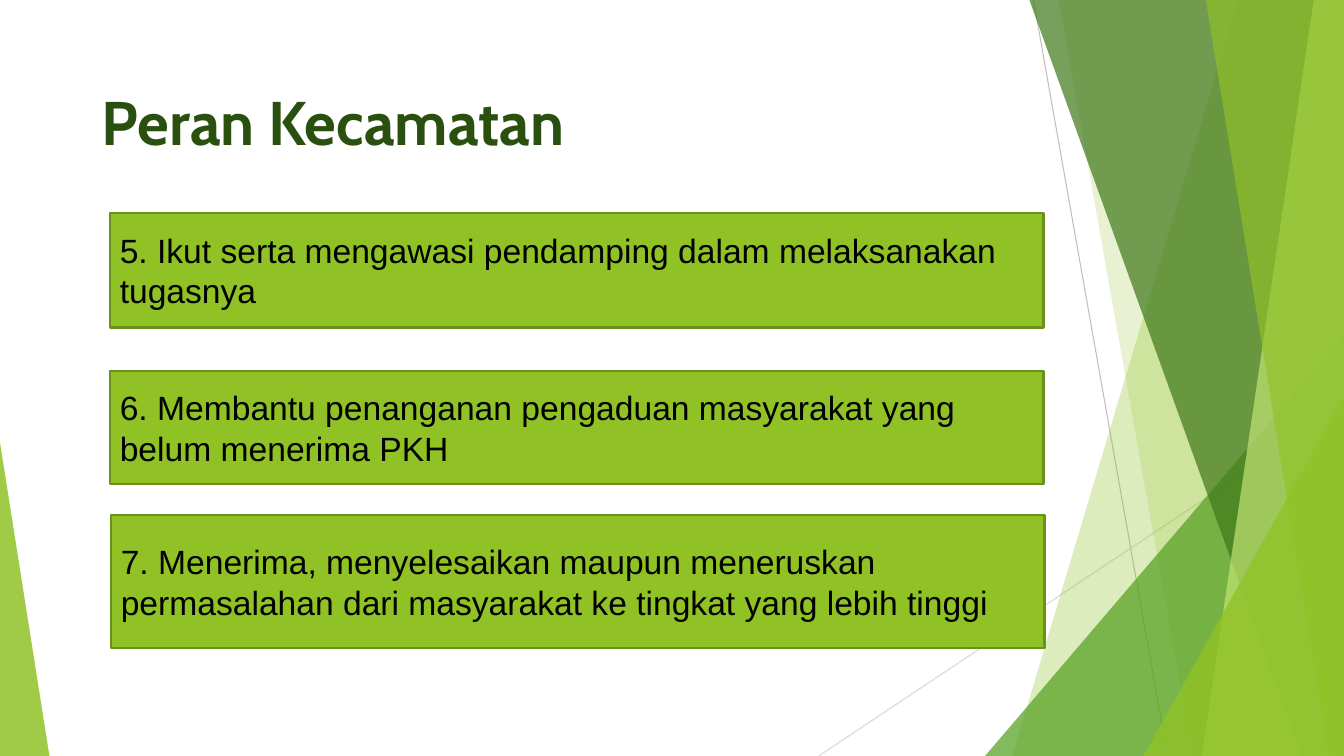
from dataclasses import dataclass

import pptx
import pptx.dml.color
import pptx.enum.shapes
import pptx.enum.text
import pptx.oxml.ns
import pptx.oxml.xmlchemy
import pptx.util
from pptx.util import Inches


@dataclass(frozen=True)
class Theme:
    lime: str = "90C226"
    lime_edge: str = "6B901C"
    pale_lime: str = "C0E474"
    green: str = "54A021"
    dark_green: str = "3F7819"
    title_color: str = "2A5010"
    body_color: str = "000000"
    steep_line: str = "BFBFBF"
    shallow_line: str = "D9D9D9"
    title_font: str = "Cabin"
    body_font: str = "Arial"
    title_size: int = 44
    body_size: int = 24


THEME = Theme()
WIDTH, HEIGHT = 13.33, 7.5
BANDS_BEHIND = [
    (12.28, 10.04, THEME.lime, 30),
    (10.5, 11.83, THEME.lime, 20),
]
BANDS_IN_FRONT = [
    (10.21, 12.91, THEME.dark_green, 70),
    (13.03, 11.92, THEME.pale_lime, 70),
    (11.96, 13.18, THEME.lime, 65),
]
ROLES = [
    (1.09, 2.11, 1.14, "5. Ikut serta mengawasi pendamping dalam melaksanakan tugasnya"),
    (1.09, 3.68, 1.12, "6. Membantu penanganan pengaduan masyarakat yang belum menerima PKH"),
    (1.1, 5.11, 1.32, "7. Menerima, menyelesaikan maupun meneruskan permasalahan dari masyarakat ke tingkat yang lebih tinggi"),
]


def rgb(color):
    return pptx.dml.color.RGBColor.from_string(color)


def paint(shape, color, opacity=100):
    shape.shadow.inherit = False
    shape.fill.solid()
    shape.fill.fore_color.rgb = rgb(color)
    shape.line.fill.background()
    if opacity < 100:
        color_element = shape._element.spPr.find(".//" + pptx.oxml.ns.qn("a:srgbClr"))
        alpha = pptx.oxml.xmlchemy.OxmlElement("a:alpha")
        alpha.set("val", str(opacity * 1000))
        color_element.append(alpha)


def add_line(slide, start, end, color):
    line = slide.shapes.add_connector(
        pptx.enum.shapes.MSO_CONNECTOR.STRAIGHT, *map(Inches, start + end))
    line.line.color.rgb = rgb(color)
    line.line.width = pptx.util.Pt(0.75)
    line._element.spPr.append(pptx.oxml.xmlchemy.OxmlElement("a:effectLst"))


def add_band(slide, top_x, bottom_x, color, opacity):
    builder = slide.shapes.build_freeform(Inches(top_x), Inches(0), scale=1.0)
    corners = [(WIDTH, 0), (WIDTH, HEIGHT), (bottom_x, HEIGHT)]
    builder.add_line_segments([(Inches(x), Inches(y)) for x, y in corners], close=True)
    paint(builder.convert_to_shape(), color, opacity)


def add_corner(slide, left, top, width, apex, color, opacity):
    shape = slide.shapes.add_shape(
        pptx.enum.shapes.MSO_SHAPE.ISOSCELES_TRIANGLE,
        Inches(left), Inches(top), Inches(width), Inches(HEIGHT - top))
    shape.adjustments[0] = apex
    paint(shape, color, opacity)


def write_text(shape, text, *, font, size, color, bold=False,
               anchor=pptx.enum.text.MSO_ANCHOR.MIDDLE):
    frame = shape.text_frame
    frame.word_wrap = True
    frame.vertical_anchor = anchor
    paragraph = frame.paragraphs[0]
    paragraph.alignment = pptx.enum.text.PP_ALIGN.LEFT
    run = paragraph.add_run()
    run.text = text
    run.font.name = font
    run.font.size = pptx.util.Pt(size)
    run.font.bold = bold
    run.font.color.rgb = rgb(color)


def add_title(slide, text):
    box = slide.shapes.add_textbox(Inches(0.91), Inches(0.78), Inches(9.4), Inches(0.84))
    write_text(box, text, font=THEME.title_font, size=THEME.title_size,
               color=THEME.title_color, bold=True, anchor=pptx.enum.text.MSO_ANCHOR.TOP)


def add_role(slide, left, top, height, text):
    shape = slide.shapes.add_shape(
        pptx.enum.shapes.MSO_SHAPE.RECTANGLE,
        Inches(left), Inches(top), Inches(9.26), Inches(height))
    paint(shape, THEME.lime)
    shape.line.color.rgb = rgb(THEME.lime_edge)
    shape.line.width = pptx.util.Pt(1.5)
    write_text(shape, text, font=THEME.body_font, size=THEME.body_size,
               color=THEME.body_color)


def add_backdrop(slide):
    add_line(slide, (10.25, 0), (11.58, HEIGHT), THEME.steep_line)
    add_line(slide, (WIDTH, 4.03), (8.12, HEIGHT), THEME.shallow_line)
    for band in BANDS_BEHIND:
        add_band(slide, *band)
    add_corner(slide, 9.77, 3.33, 3.56, 1, THEME.green, 72)
    for band in BANDS_IN_FRONT:
        add_band(slide, *band)
    add_corner(slide, 11.34, 3.93, 1.99, 1, THEME.lime, 80)
    add_corner(slide, 0, 4.39, 0.49, 0, THEME.lime, 85)


def main():
    presentation = pptx.Presentation()
    presentation.slide_width = Inches(WIDTH)
    presentation.slide_height = Inches(HEIGHT)
    slide = presentation.slides.add_slide(presentation.slide_layouts[6])
    add_backdrop(slide)
    add_title(slide, "Peran Kecamatan")
    for role in ROLES:
        add_role(slide, *role)
    presentation.save("out.pptx")


if __name__ == "__main__":
    main()
